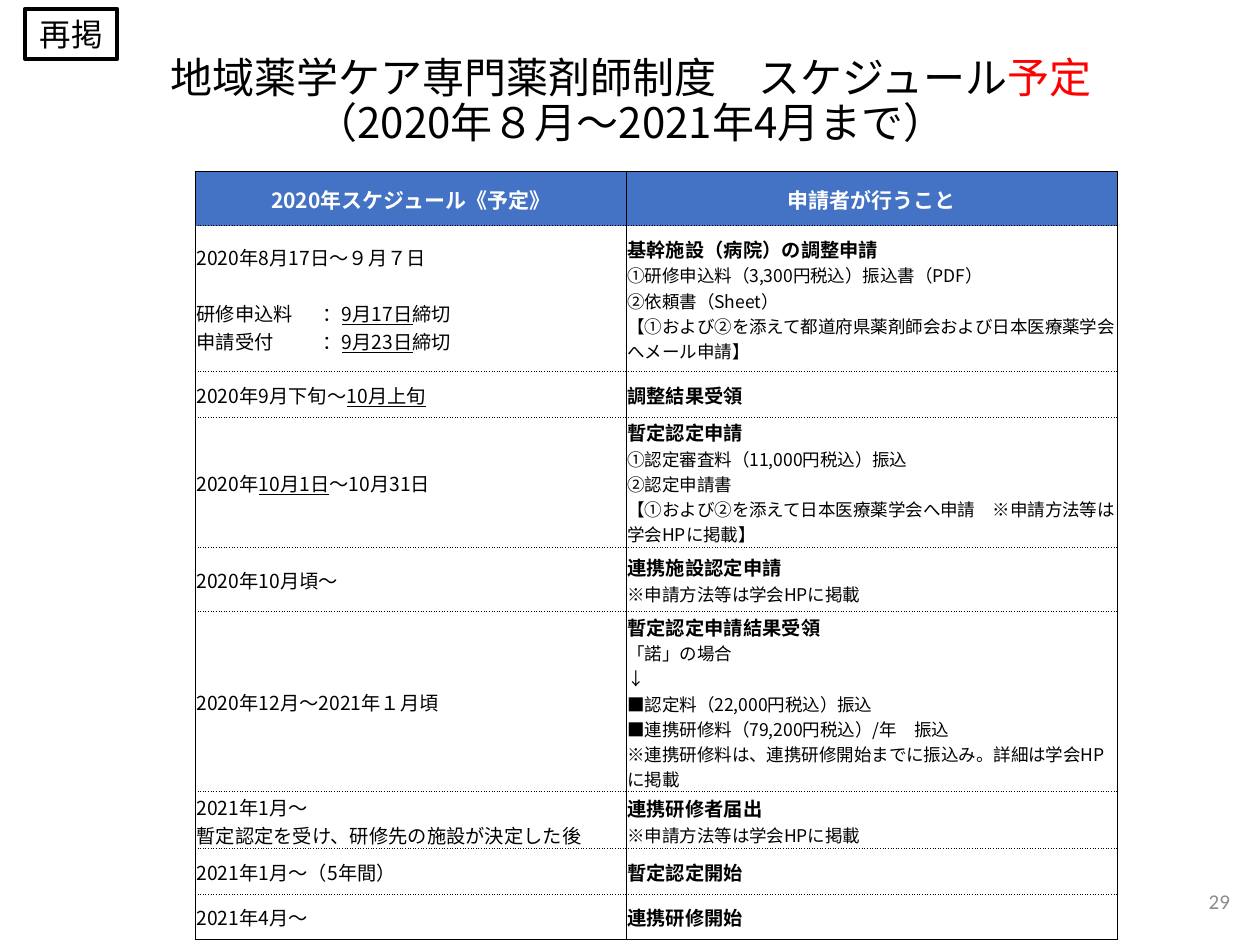
"""Build the schedule slide for the community pharmacy care specialist programme."""
from lxml.etree import SubElement
from pptx import Presentation
from pptx.dml.color import RGBColor
from pptx.enum.shapes import MSO_SHAPE
from pptx.enum.text import MSO_ANCHOR, MSO_AUTO_SIZE, PP_ALIGN
from pptx.oxml.ns import qn
from pptx.util import Inches, Pt

BLACK = RGBColor(0x00, 0x00, 0x00)
WHITE = RGBColor(0xFF, 0xFF, 0xFF)
RED = RGBColor(0xFF, 0x00, 0x00)
BLUE = RGBColor(0x44, 0x72, 0xC4)
GREY = RGBColor(0x8C, 0x8C, 0x8C)
JAPANESE = "Noto Sans CJK JP"

HEADINGS = ["2020年スケジュール《予定》", "申請者が行うこと"]
STEPS = [
    (11.6, ["2020年8月17日～９月７日", "研修申込料\t：|9月17日|締切", "申請受付\t：|9月23日|締切"],
     "基幹施設（病院）の調整申請",
     "①研修申込料（3,300円税込）振込書（PDF）\n②依頼書（Sheet）\n"
     "【①および②を添えて都道府県薬剤師会および日本医療薬学会へメール申請】"),
    (3.6, ["2020年9月下旬～|10月上旬"], "調整結果受領", ""),
    (9.9, ["2020年|10月1日|～10月31日"], "暫定認定申請",
     "①認定審査料（11,000円税込）振込\n②認定申請書\n"
     "【①および②を添えて日本医療薬学会へ申請　※申請方法等は学会HPに掲載】"),
    (5.1, ["2020年10月頃～"], "連携施設認定申請", "※申請方法等は学会HPに掲載"),
    (13.3, ["2020年12月～2021年１月頃"], "暫定認定申請結果受領",
     "「諾」の場合\n↓\n■認定料（22,000円税込）振込\n■連携研修料（79,200円税込）/年　振込\n"
     "※連携研修料は、連携研修開始までに振込み。詳細は学会HPに掲載"),
    (4, ["2021年1月～", "暫定認定を受け、研修先の施設が決定した後"],
     "連携研修者届出", "※申請方法等は学会HPに掲載"),
    (3.6, ["2021年1月～（5年間）"], "暫定認定開始", ""),
    (3.6, ["2021年4月～"], "連携研修開始", ""),
]


def write(paragraph, text, size, color=BLACK, face=JAPANESE, **formats):
    for index, line in enumerate(text.split("\n")):
        if index:
            paragraph.add_line_break()
        run = paragraph.add_run()
        run.text = line
        run.font.color.rgb = color
        look = {"size": Pt(size), "name": face, "bold": False, **formats}
        for key, value in look.items():
            setattr(run.font, key, value)
        SubElement(run.font._element, qn("a:ea"), typeface=face)


def rule_cell(cell, row, last):
    dashes = {"L": "solid", "R": "solid", "T": "sysDot" if row else "solid",
              "B": "solid" if row == last else "sysDot"}
    properties = cell._tc.get_or_add_tcPr()
    for side, dash in dashes.items():
        line = SubElement(properties, qn(f"a:ln{side}"), w=str(Pt(0.5)))
        SubElement(SubElement(line, qn("a:solidFill")), qn("a:srgbClr"), val=str(BLACK))
        SubElement(line, qn("a:prstDash"), val=dash)


deck = Presentation()
deck.slide_width, deck.slide_height = Inches(10), Inches(7.5)
unit = deck.slide_width // 100
slide = deck.slides.add_slide(deck.slide_layouts[5])

title = slide.shapes.title
title_place = {"left": 3.1, "top": 3.8, "width": 93.9, "height": 8.7}
for key, value in title_place.items():
    setattr(title, key, int(value * unit))
title_format = {"vertical_anchor": MSO_ANCHOR.MIDDLE, "word_wrap": True,
                "auto_size": MSO_AUTO_SIZE.NONE}
for key, value in title_format.items():
    setattr(title.text_frame, key, value)
heading = title.text_frame.paragraphs[0]
heading.alignment, heading.line_spacing = PP_ALIGN.CENTER, 0.9
write(heading, "地域薬学ケア専門薬剤師制度　スケジュール", 24)
write(heading, "予定", 24, RED)
heading.add_line_break()
write(heading, "（2020年８月～2021年4月まで）", 24)

heights = [4.3] + [step[0] for step in STEPS]
schedule = slide.shapes.add_table(
    len(heights), 2, int(15.5 * unit), int(13.6 * unit),
    int(73.2 * unit), int(sum(heights) * unit)).table
for column, width in zip(schedule.columns, [34.2, 39]):
    column.width = int(width * unit)
cell_format = {"vertical_anchor": MSO_ANCHOR.MIDDLE, "margin_left": Inches(0.01),
               "margin_top": Inches(0.01), "margin_right": Inches(0.01), "margin_bottom": 0}
for row, height in enumerate(heights):
    schedule.rows[row].height = int(height * unit)
    for cell in schedule.rows[row].cells:
        for key, value in cell_format.items():
            setattr(cell, key, value)
        rule_cell(cell, row, len(STEPS))
        if row:
            cell.fill.background()
        else:
            cell.fill.solid()
            cell.fill.fore_color.rgb = BLUE

for cell, label in zip(schedule.rows[0].cells, HEADINGS):
    cell.text_frame.paragraphs[0].alignment = PP_ALIGN.CENTER
    write(cell.text_frame.paragraphs[0], label, 12, WHITE, bold=True)

for row, (height, dates, task, details) in enumerate(STEPS, 1):
    period, action = (cell.text_frame for cell in schedule.rows[row].cells)
    for index, date in enumerate(dates):
        entry = period.add_paragraph() if index else period.paragraphs[0]
        for part, text in enumerate(date.split("|")):
            write(entry, text, 11, underline=part % 2 == 1)
    write(action.paragraphs[0], task, 11, bold=True)
    if details:
        action.paragraphs[0].add_line_break()
        write(action.paragraphs[0], details, 10)
schedule.cell(1, 0).text_frame.paragraphs[0].space_after = Pt(16)

page_number = slide.shapes.add_textbox(
    int(76.1 * unit), int(69.5 * unit), int(22.5 * unit), 4 * unit).text_frame
page_number.word_wrap, page_number.vertical_anchor = True, MSO_ANCHOR.MIDDLE
page_number.paragraphs[0].alignment = PP_ALIGN.RIGHT
write(page_number.paragraphs[0], "29", 12, GREY, "Calibri")

reprint_mark = slide.shapes.add_shape(
    MSO_SHAPE.RECTANGLE, 2 * unit, int(0.7 * unit), int(7.3 * unit), 4 * unit)
reprint_mark.shadow.inherit = False
reprint_mark.fill.background()
reprint_mark.line.color.rgb, reprint_mark.line.width = BLACK, Pt(2.25)
reprint_mark.text_frame.word_wrap = False
reprint_mark.text_frame.auto_size = MSO_AUTO_SIZE.SHAPE_TO_FIT_TEXT
reprint_mark.text_frame.paragraphs[0].alignment = PP_ALIGN.CENTER
write(reprint_mark.text_frame.paragraphs[0], "再掲", 18)

deck.save("out.pptx")
